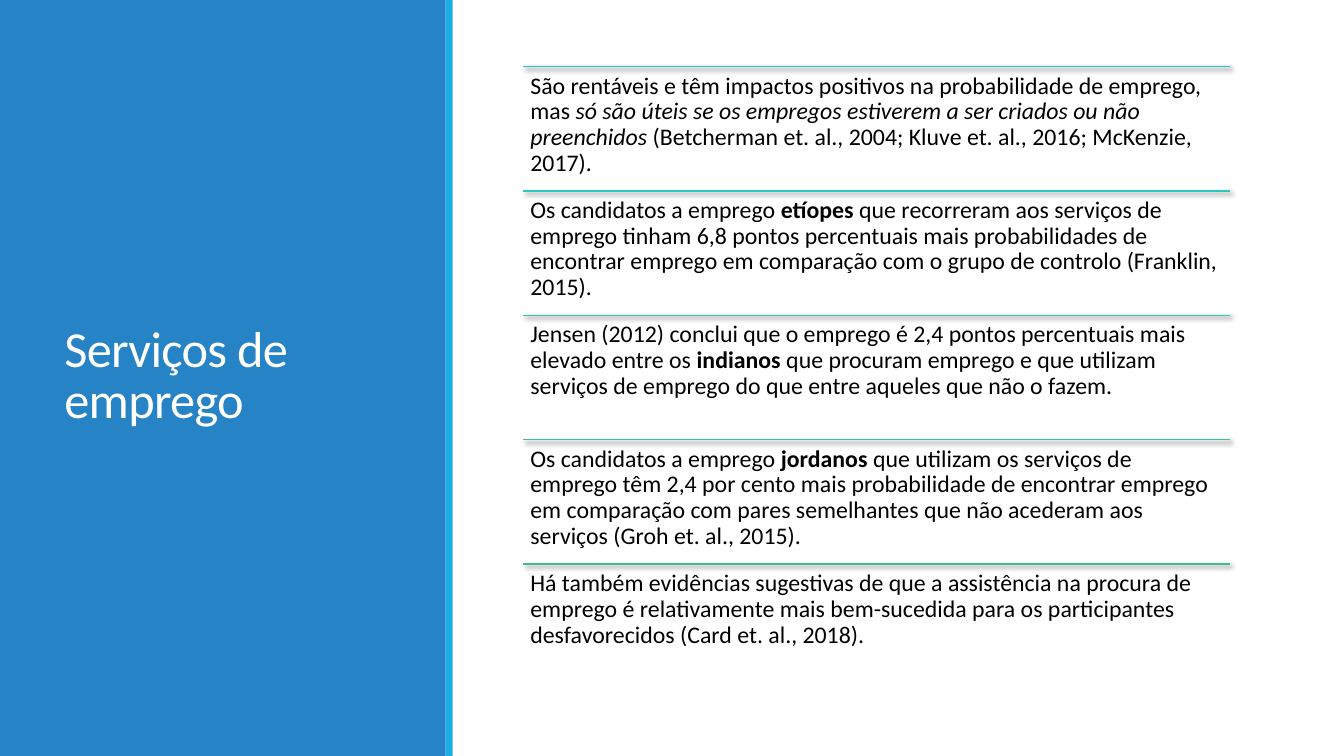
from lxml import etree
from pptx import Presentation
from pptx.dml.color import RGBColor
from pptx.enum.shapes import MSO_CONNECTOR, MSO_SHAPE
from pptx.enum.text import MSO_ANCHOR
from pptx.oxml import parse_xml
from pptx.util import Inches, Pt

RECTANGLE = MSO_SHAPE.RECTANGLE
STRAIGHT = MSO_CONNECTOR.STRAIGHT
TOP, MIDDLE = MSO_ANCHOR.TOP, MSO_ANCHOR.MIDDLE

BLUE = RGBColor(0x26, 0x83, 0xC6)
CYAN = RGBColor(0x1C, 0xAD, 0xE4)
WHITE = RGBColor(0xFF, 0xFF, 0xFF)
BLACK = RGBColor(0x00, 0x00, 0x00)
RULE_COLORS = [
    RGBColor(0x28, 0xC4, 0xCC),
    RGBColor(0x2E, 0xC8, 0xC2),
    RGBColor(0x35, 0xC3, 0xB2),
    RGBColor(0x3B, 0xBF, 0xA4),
    RGBColor(0x42, 0xBA, 0x97),
]
FONT = "Calibri"
PLAIN, BOLD, ITALIC = "plain", "bold", "italic"

TITLE = "Serviços de emprego"
FINDINGS = [
    [("São rentáveis e têm impactos positivos na probabilidade de emprego, mas ", PLAIN),
     ("só são úteis se os empregos estiverem a ser criados ou não preenchidos ", ITALIC),
     ("(Betcherman et. al., 2004; Kluve et. al., 2016; McKenzie, 2017).", PLAIN)],
    [("Os candidatos a emprego ", PLAIN),
     ("etíopes ", BOLD),
     ("que recorreram aos serviços de emprego tinham 6,8 pontos percentuais mais "
      "probabilidades de encontrar emprego em comparação com o grupo de controlo "
      "(Franklin, 2015).", PLAIN)],
    [("Jensen (2012) conclui que o emprego é 2,4 pontos percentuais mais elevado entre os ", PLAIN),
     ("indianos", BOLD),
     (" que procuram emprego e que utilizam serviços de emprego do que entre aqueles "
      "que não o fazem.", PLAIN)],
    [("Os candidatos a emprego ", PLAIN),
     ("jordanos", BOLD),
     (" que utilizam os serviços de emprego têm 2,4 por cento mais probabilidade de "
      "encontrar emprego em comparação com pares semelhantes que não acederam aos "
      "serviços (Groh et. al., 2015).", PLAIN)],
    [("Há também evidências sugestivas de que a assistência na procura de emprego é "
      "relativamente mais bem-sucedida para os participantes desfavorecidos "
      "(Card et. al., 2018).", PLAIN)],
]
RULE_SHADOW = (
    '<a:effectLst xmlns:a="http://schemas.openxmlformats.org/drawingml/2006/main">'
    '<a:outerShdw blurRad="44450" dist="25400" dir="2700000" algn="br" rotWithShape="0">'
    '<a:srgbClr val="000000"><a:alpha val="60000"/></a:srgbClr>'
    '</a:outerShdw></a:effectLst>'
)


def add_band(slide, left, top, width, height, color):
    """Draw a borderless filled rectangle."""
    band = slide.shapes.add_shape(
        RECTANGLE, Inches(left), Inches(top), Inches(width), Inches(height))
    band.shadow.inherit = False
    band.fill.solid()
    band.fill.fore_color.rgb = color
    band.line.fill.background()


def add_text(slide, left, top, width, height, runs, size, color, spacing, insets, anchor):
    """Write one wrapped paragraph of styled runs and return it."""
    box = slide.shapes.add_textbox(
        Inches(left), Inches(top), Inches(width), Inches(height))
    frame = box.text_frame
    frame.word_wrap = True
    frame.vertical_anchor = anchor
    frame.margin_left = frame.margin_right = Inches(insets[0])
    frame.margin_top = frame.margin_bottom = Inches(insets[1])
    paragraph = frame.paragraphs[0]
    paragraph.line_spacing = spacing
    for words, style in runs:
        run = paragraph.add_run()
        run.text = words
        run.font.name = FONT
        run.font.size = Pt(size)
        run.font.color.rgb = color
        run.font.bold = style == BOLD
        run.font.italic = style == ITALIC
    return paragraph


def add_title_panel(slide, left, top, width, height):
    """Draw the blue side panel with its title and cyan edge."""
    edge = 0.07
    add_band(slide, left, top, width - edge, height, BLUE)
    add_band(slide, left + width - edge, top, edge, height, CYAN)
    title = add_text(slide, left + 0.54, top + 0.66, 3.37, 6.17, [(TITLE, PLAIN)],
                     36, WHITE, 0.85, (0.1, 0.05), MIDDLE)
    title.runs[0].font._element.set("spc", "-50")


def add_rule(slide, left, top, width, color):
    """Draw a thin horizontal line with a soft shadow."""
    rule = slide.shapes.add_connector(
        STRAIGHT, Inches(left), Inches(top), Inches(left + width), Inches(top))
    rule.line.color.rgb = color
    rule.line.width = Pt(1)
    etree.strip_elements(rule._element.spPr, "{*}effectLst")
    rule._element.spPr.append(parse_xml(RULE_SHADOW))


def add_findings(slide, left, top, width, height):
    """Stack the findings in equal rows, each under its own rule."""
    row_height = height / len(FINDINGS)
    for row, (finding, color) in enumerate(zip(FINDINGS, RULE_COLORS)):
        row_top = top + row * row_height
        add_rule(slide, left, row_top, width, color)
        add_text(slide, left, row_top, width, row_height, finding,
                 17, BLACK, 0.9, (0.07, 0.07), TOP)


def main():
    """Build and save the slide."""
    deck = Presentation()
    deck.slide_width, deck.slide_height = Inches(13.33), Inches(7.5)
    slide = deck.slides.add_slide(deck.slide_layouts[6])
    add_title_panel(slide, 0, 0, 4.49, 7.5)
    add_findings(slide, 5.19, 0.66, 7.01, 6.17)
    deck.save("out.pptx")


if __name__ == "__main__":
    main()
